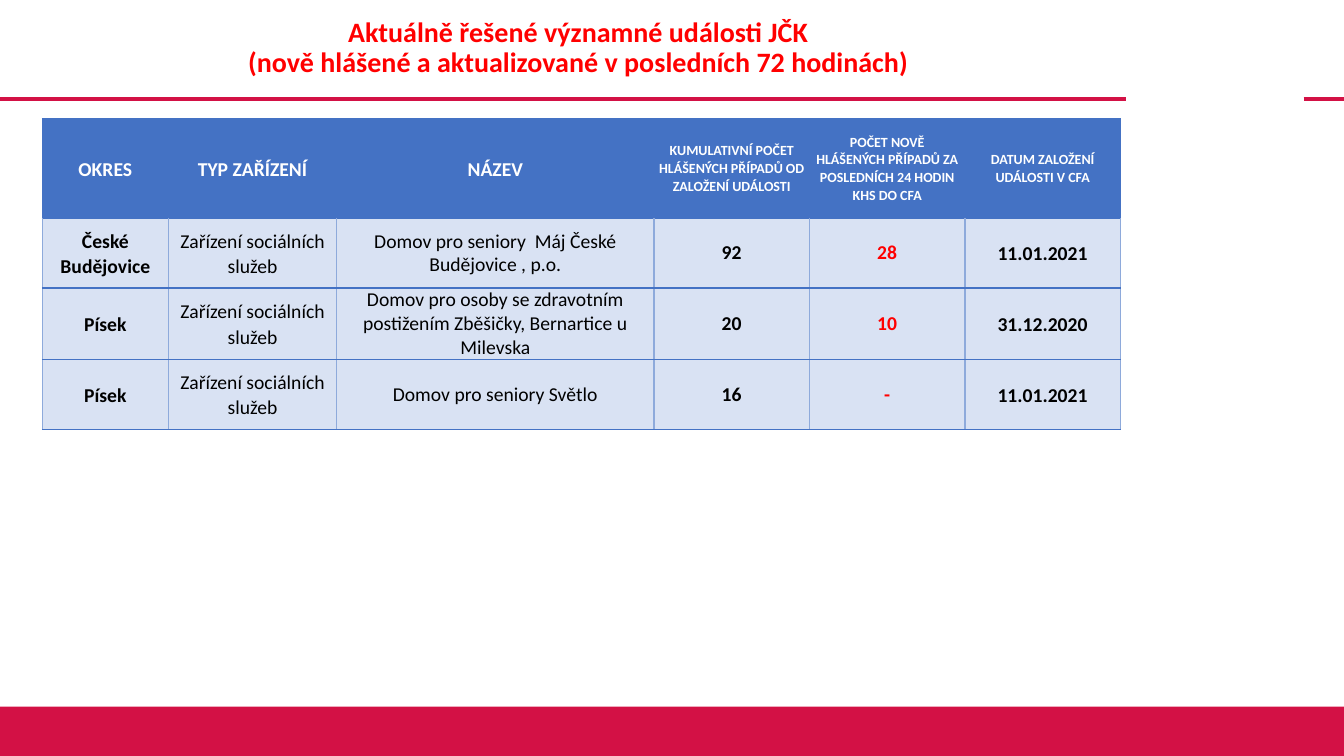
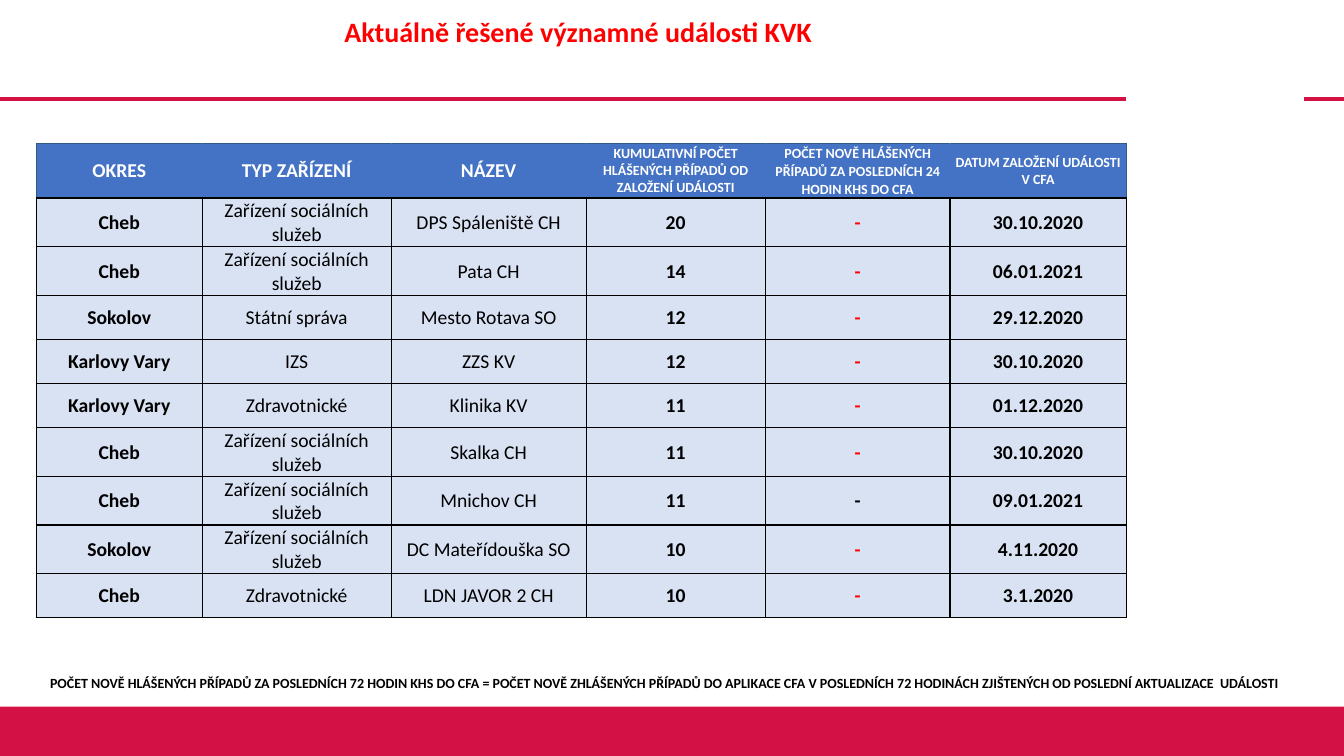
from lxml import etree
from pptx import Presentation
from pptx import util as u
from pptx.dml.color import RGBColor
from pptx.enum import shapes, text
from pptx.oxml import ns

C = {
    "crimson": "D31145", "red": "FF0000", "white": "FFFFFF", "black": "000000",
    "head": "4472C4", "body": "D9E2F3", "column": "8EAADB", "edge": "305983",
}
CARE = "Zařízení sociálních služeb"
HEADS = ["OKRES", "TYP ZAŘÍZENÍ", "NÁZEV",
         "KUMULATIVNÍ POČET HLÁŠENÝCH PŘÍPADŮ OD ZALOŽENÍ UDÁLOSTI",
         "POČET NOVĚ HLÁŠENÝCH PŘÍPADŮ ZA POSLEDNÍCH 24 HODIN KHS DO CFA",
         "DATUM ZALOŽENÍ UDÁLOSTI V CFA"]
NOTE = ("POČET NOVĚ HLÁŠENÝCH PŘÍPADŮ ZA POSLEDNÍCH 72 HODIN KHS DO CFA = "
        "POČET NOVĚ ZHLÁŠENÝCH PŘÍPADŮ DO APLIKACE CFA V POSLEDNÍCH 72 HODINÁCH "
        "ZJIŠTENÝCH OD POSLEDNÍ AKTUALIZACE  UDÁLOSTI")

REGIONS = [
    {
        "title": ["Aktuálně řešené významné události JČK",
                  "(nově hlášené a aktualizované v posledních 72 hodinách)"],
        "left": 3.15, "top": 15.7,
        "cols": [9.38, 12.53, 23.6, 11.57, 11.57, 11.57],
        "heights": [13.2, 9.2, 9.5, 9.2],
        "pads": [0.05, 0.05, 0.05, 0, 0.05, 0.05], "top_pad": 0,
        "head_leading": [1.07] * 3 + [1.05] * 3,
        "leading": [1.07, 1.07, 1, 1, 1, 1.07],
        "head_edge": "head", "across": "head", "down": "column",
        "black_new": [], "note": None,
        "rows": [
            ["České Budějovice", CARE, "Domov pro seniory  Máj České Budějovice , p.o.",
             "92", "28", "11.01.2021"],
            ["Písek", CARE,
             "Domov pro osoby se zdravotním postižením Zběšičky, Bernartice u Milevska",
             "20", "10", "31.12.2020"],
            ["Písek", CARE, "Domov pro seniory Světlo", "16", "-", "11.01.2021"],
        ],
    },
    {
        "title": ["Aktuálně řešené významné události KVK"],
        "left": 2.7, "top": 18.95,
        "cols": [12.35, 14.06, 14.51, 13.32, 13.76, 13.1],
        "heights": [7.25, 6.43, 6.43, 5.85, 5.85, 5.85, 6.43, 6.43, 6.43, 5.85],
        "pads": [0.01] * 6, "top_pad": 0.01,
        "head_leading": [1, 1, 1, 1, 1.05, 1],
        "leading": [1] * 6,
        "head_edge": "edge", "across": "black", "down": "black",
        "black_new": [7], "note": NOTE,
        "rows": [
            ["Cheb", CARE, "DPS Spáleniště CH", "20", "-", "30.10.2020"],
            ["Cheb", CARE, "Pata CH", "14", "-", "06.01.2021"],
            ["Sokolov", "Státní správa", "Mesto Rotava SO", "12", "-", "29.12.2020"],
            ["Karlovy Vary", "IZS", "ZZS KV", "12", "-", "30.10.2020"],
            ["Karlovy Vary", "Zdravotnické", "Klinika KV", "11", "-", "01.12.2020"],
            ["Cheb", CARE, "Skalka CH", "11", "-", "30.10.2020"],
            ["Cheb", CARE, "Mnichov CH", "11", "-", "09.01.2021"],
            ["Sokolov", CARE, "DC Mateřídouška SO", "10", "-", "4.11.2020"],
            ["Cheb", "Zdravotnické", "LDN JAVOR 2 CH", "10", "-", "3.1.2020"],
        ],
    },
]

prs = Presentation()
prs.slide_width, prs.slide_height = u.Inches(13.33), u.Inches(7.5)


def share(x, y, w, h):
    return [int(side * pct / 100) for side, pct in
            zip([prs.slide_width, prs.slide_height] * 2, [x, y, w, h])]


def write(tf, lines, size, color, bold=True, leading=1):
    tf.word_wrap = True
    for i, line in enumerate(lines):
        p = tf.add_paragraph() if i else tf.paragraphs[0]
        p.alignment = text.PP_ALIGN.CENTER
        p.line_spacing = leading
        r = p.add_run()
        r.text = line
        r.font.name, r.font.size, r.font.bold = "Calibri", u.Pt(size), bold
        r.font.color.rgb = RGBColor.from_string(C[color])


for region in REGIONS:
    s = prs.slides.add_slide(prs.slide_layouts[6])

    for start, end in [(0, 83.8), (97, 100)]:
        x1, y, x2, _ = share(start, 13.07, end, 0)
        rule = s.shapes.add_connector(shapes.MSO_CONNECTOR.STRAIGHT, x1, y, x2, y)
        rule.line.width = u.Pt(3)
        rule.line.color.rgb = RGBColor.from_string(C["crimson"])
        etree.SubElement(rule.line._get_or_add_ln().getparent(), ns.qn("a:effectLst"))

    band = s.shapes.add_shape(shapes.MSO_SHAPE.RECTANGLE, *share(0, 93.47, 100, 6.53))
    band.shadow.inherit = False
    band.fill.solid()
    band.fill.fore_color.rgb = RGBColor.from_string(C["crimson"])
    band.line.fill.background()

    tf = s.shapes.add_textbox(*share(2.25, 0, 81.55, 13.07)).text_frame
    tf.margin_top = u.Inches(0.18)
    write(tf, region["title"], 20, "red", leading=0.9)

    rows = [HEADS] + region["rows"]
    last = len(HEADS) - 1
    frame = s.shapes.add_table(
        len(rows), len(HEADS),
        *share(region["left"], region["top"], sum(region["cols"]), sum(region["heights"])))
    table = frame.table
    table.horz_banding = False
    for col, pct in zip(table.columns, region["cols"]):
        col.width = share(pct, 0, 0, 0)[0]
    for row, pct in zip(table.rows, region["heights"]):
        row.height = share(0, pct, 0, 0)[1]

    for i, values in enumerate(rows):
        for j, value in enumerate(values):
            head = i == 0
            cell = table.cell(i, j)
            cell.vertical_anchor = text.MSO_ANCHOR.MIDDLE
            cell.margin_left = cell.margin_right = u.Inches(region["pads"][j])
            cell.margin_top, cell.margin_bottom = u.Inches(region["top_pad"]), 0

            edge, across, down = region["head_edge"], region["across"], region["down"]
            borders = {"L": down, "R": down, "T": across, "B": across}
            if head:
                borders = {"L": "head" if j else edge, "R": "head" if j < last else edge,
                           "T": edge, "B": across}
            tcPr = cell._tc.get_or_add_tcPr()
            for side, color in borders.items():
                ln = etree.SubElement(tcPr, ns.qn("a:ln" + side), w=str(u.Pt(1)))
                fill = etree.SubElement(ln, ns.qn("a:solidFill"))
                etree.SubElement(fill, ns.qn("a:srgbClr"), val=C[color])
            cell.fill.solid()
            cell.fill.fore_color.rgb = RGBColor.from_string(C["head" if head else "body"])

            if head:
                write(cell.text_frame, [value], 14 if j < 3 else 10, "white",
                      leading=region["head_leading"][j])
            else:
                red = j == 4 and i not in region["black_new"]
                write(cell.text_frame, [value], 14, "red" if red else "black",
                      bold=j not in (1, 2), leading=region["leading"][j])

    if region["note"]:
        tf = s.shapes.add_textbox(*share(0, 88.4, 98.8, 3.6)).text_frame
        write(tf, [region["note"]], 10, "black", leading=1.05)

prs.save("out.pptx")
